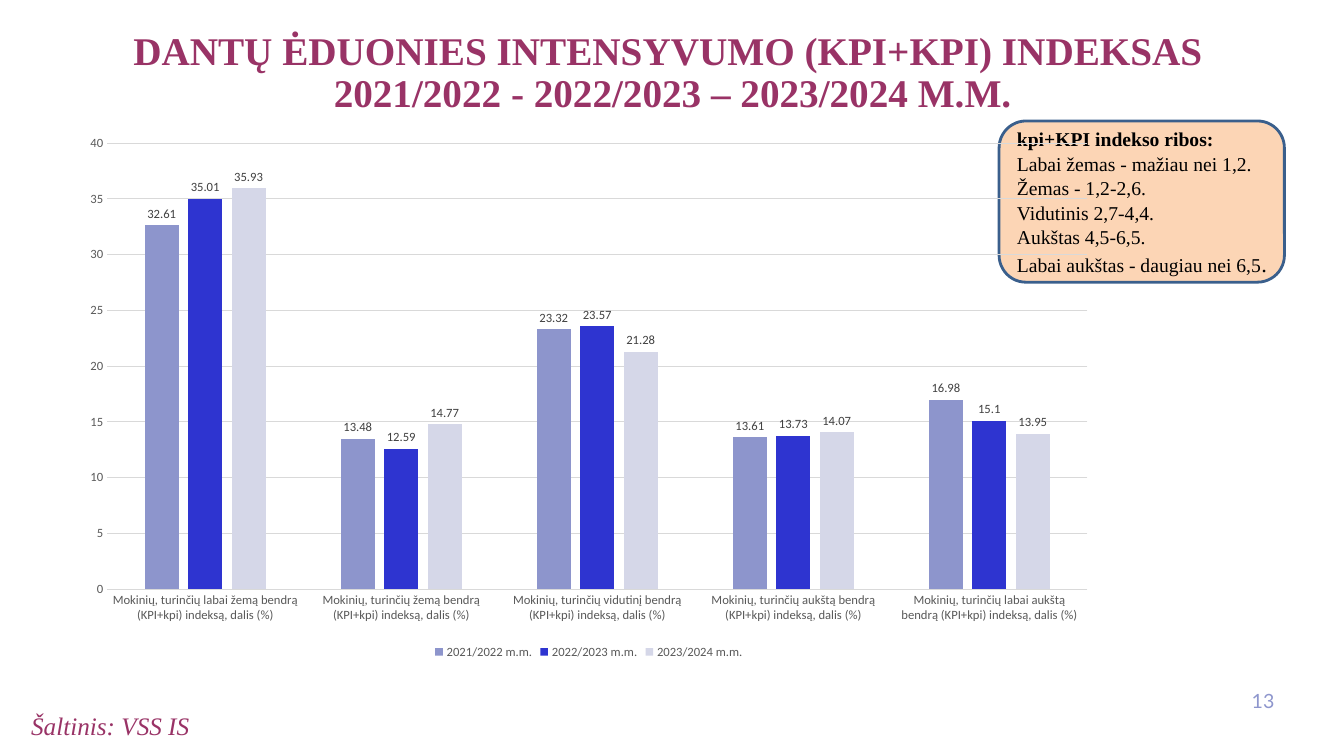
from pptx import Presentation
from pptx.chart.data import CategoryChartData
from pptx.dml.color import RGBColor
from pptx.enum.chart import XL_CHART_TYPE, XL_LABEL_POSITION, XL_LEGEND_POSITION, XL_TICK_MARK
from pptx.enum.shapes import MSO_SHAPE
from pptx.enum.text import MSO_ANCHOR, MSO_AUTO_SIZE, PP_ALIGN
from pptx.util import Inches, Pt

SERIF, SANS = "Times New Roman", "Calibri"
THEME = {
    "title": dict(name=SERIF, size=Pt(28), bold=True, color="993366"),
    "source": dict(name=SERIF, size=Pt(18), italic=True, color="993366"),
    "number": dict(name="Lato", size=Pt(14), color="8E96CD"),
    "ranges": dict(name=SERIF, size=Pt(14), bold=False, color="000000"),
    "ranges_head": dict(name=SERIF, size=Pt(14), bold=True, color="000000"),
    "ranges_end": dict(name=SERIF, size=Pt(16), bold=False, color="000000"),
    "chart": dict(name=SANS, size=Pt(10), color="000000"),
    "axis": dict(name=SANS, size=Pt(9), color="595959"),
    "label": dict(name=SANS, size=Pt(9), color="404040"),
    "box_fill": "FCD5B5",
    "box_line": "3A5F8C",
    "grid": "D9D9D9",
    "series": ["8D95CC", "2E34D0", "D5D7E8"],
}

prs = Presentation()
prs.slide_width, prs.slide_height = Inches(13.33), Inches(7.5)
s = prs.slides.add_slide(prs.slide_layouts[5])


def area(left, top, width, height):
    """Turn percentages of the slide into left, top, width, height."""
    across, down = prs.slide_width / 100, prs.slide_height / 100
    return int(left * across), int(top * down), int(width * across), int(height * down)


def style(font, kind):
    for key, value in THEME[kind].items():
        if key == "color":
            font.color.rgb = RGBColor.from_string(value)
        else:
            setattr(font, key, value)


# Title
sp = s.shapes.title
sp.left, sp.top, sp.width, sp.height = area(1.58, 7.73, 96.92, 8.27)
tf = sp.text_frame
tf.text = "DANTŲ ĖDUONIES INTENSYVUMO (KPI+KPI) INDEKSAS \v2021/2022 - 2022/2023 – 2023/2024 M.M."
tf.auto_size, tf.vertical_anchor = MSO_AUTO_SIZE.NONE, MSO_ANCHOR.BOTTOM
p = tf.paragraphs[0]
p.alignment, p.line_spacing = PP_ALIGN.CENTER, 0.9
for r in p.runs:
    style(r.font, "title")

# Source and slide number
for text, kind, place, align in [
    ("Šaltinis: VSS IS", "source", (1.58, 93.33, 47.26, 5.07), PP_ALIGN.LEFT),
    ("13", "number", (91.67, 90.53, 3.9, 5.33), PP_ALIGN.RIGHT),
]:
    tf = s.shapes.add_textbox(*area(*place)).text_frame
    tf.word_wrap = True
    p = tf.paragraphs[0]
    p.alignment = align
    r = p.add_run()
    r.text = text
    style(r.font, kind)

# Index ranges
sp = s.shapes.add_shape(MSO_SHAPE.ROUNDED_RECTANGLE, *area(74.34, 16, 21.23, 21.33))
sp.shadow.inherit = False
sp.fill.solid()
sp.fill.fore_color.rgb = RGBColor.from_string(THEME["box_fill"])
sp.line.color.rgb = RGBColor.from_string(THEME["box_line"])
sp.line.width = Pt(2)
tf = sp.text_frame
tf.word_wrap, tf.vertical_anchor, tf.margin_right = True, MSO_ANCHOR.MIDDLE, Inches(0.05)
ranges = [
    [("kpi+KPI indekso ribos:", "ranges_head")],
    [("Labai žemas - mažiau nei 1,2.", "ranges")],
    [("Žemas - 1,2-2,6.", "ranges")],
    [("Vidutinis 2,7-4,4.", "ranges")],
    [("Aukštas 4,5-6,5.", "ranges")],
    [("Labai aukštas - daugiau nei 6,5", "ranges"), (".", "ranges_end")],
]
for i, parts in enumerate(ranges):
    p = tf.add_paragraph() if i else tf.paragraphs[0]
    p.alignment, p.line_spacing = PP_ALIGN.LEFT, 1.04
    for text, kind in parts:
        r = p.add_run()
        r.text = text
        style(r.font, kind)

# Chart
data = CategoryChartData()
data.categories = [
    f"Mokinių, turinčių {level} bendrą (KPI+kpi) indeksą, dalis (%)"
    for level in ("labai žemą", "žemą", "vidutinį", "aukštą", "labai aukštą")
]
data.add_series("2021/2022 m.m.", (32.61, 13.48, 23.32, 13.61, 16.98))
data.add_series("2022/2023 m.m.", (35.01, 12.59, 23.57, 13.73, 15.1))
data.add_series("2023/2024 m.m.", (35.93, 14.77, 21.28, 14.07, 13.95))
chart = s.shapes.add_chart(
    XL_CHART_TYPE.COLUMN_CLUSTERED, *area(5.18, 16.53, 77.27, 71.2), data
).chart
style(chart.font, "chart")
chart.has_title = False
chart.has_legend = True
chart.legend.position = XL_LEGEND_POSITION.BOTTOM
chart.legend.include_in_layout = False
style(chart.legend.font, "axis")

cat, val = chart.category_axis, chart.value_axis
for axis in (cat, val):
    axis.major_tick_mark = axis.minor_tick_mark = XL_TICK_MARK.NONE
    style(axis.tick_labels.font, "axis")
val.minimum_scale, val.maximum_scale, val.major_unit = 0, 40, 5
val.has_major_gridlines = True
val.format.line.fill.background()
for line in (cat.format.line, val.major_gridlines.format.line):
    line.color.rgb = RGBColor.from_string(THEME["grid"])
    line.width = Pt(0.75)

plot = chart.plots[0]
plot.gap_width, plot.overlap, plot.vary_by_categories = 219, -27, False
for series, color in zip(plot.series, THEME["series"]):
    series.format.fill.solid()
    series.format.fill.fore_color.rgb = RGBColor.from_string(color)
    labels = series.data_labels
    labels.show_value = True
    labels.position = XL_LABEL_POSITION.OUTSIDE_END
    style(labels.font, "label")

prs.save("out.pptx")
